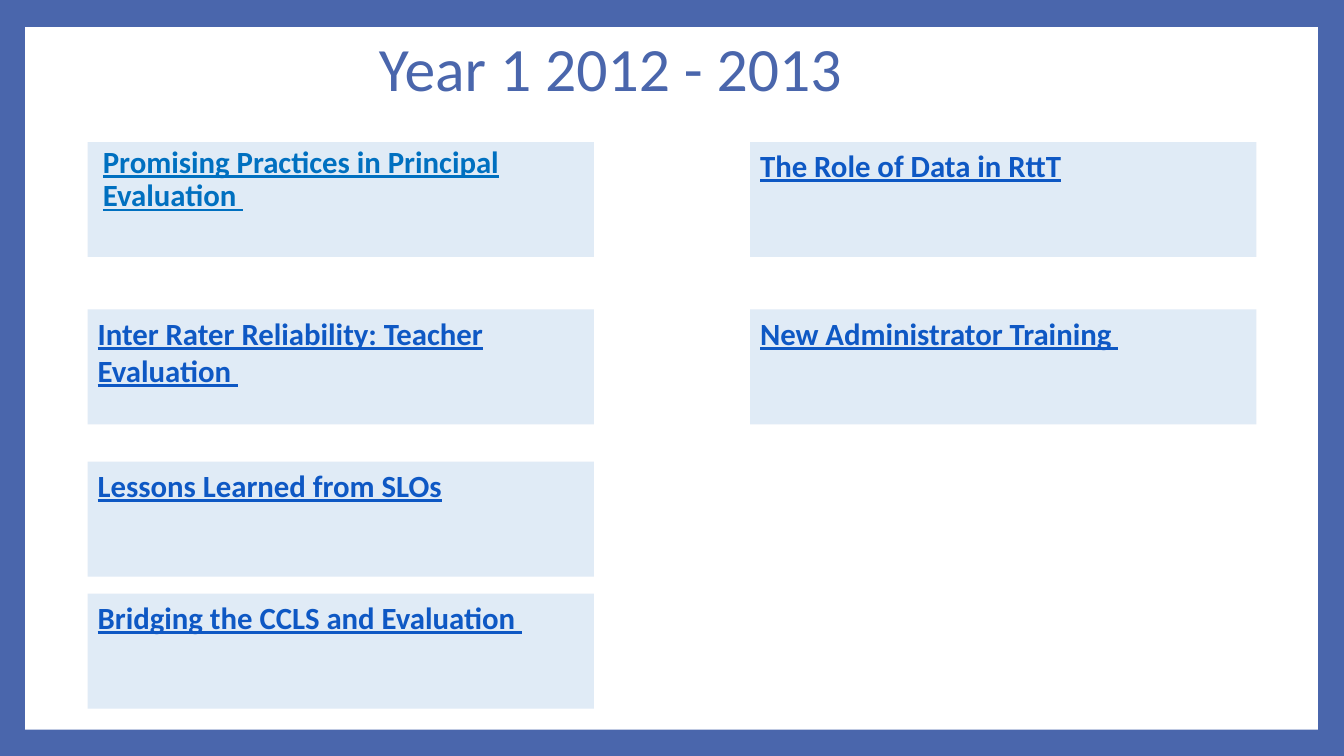
from pptx import Presentation
from pptx.dml.color import RGBColor
from pptx.enum.shapes import MSO_SHAPE
from pptx.enum.text import MSO_ANCHOR, PP_ALIGN
from pptx.util import Inches, Pt

RECT = MSO_SHAPE.RECTANGLE
TOP, MIDDLE = MSO_ANCHOR.TOP, MSO_ANCHOR.MIDDLE
LEFT, CENTER = PP_ALIGN.LEFT, PP_ALIGN.CENTER

FONT = "Calibri"
BLUE, WHITE, PALE = "4A66AC", "FFFFFF", "E0EBF6"
LINK, LEAD_LINK = "0E58C4", "0070C0"

COLUMNS = (0.87, 7.44)
ROWS = (1.41, 3.07, 4.58, 5.89)
CARD_W, CARD_H = 5.02, 1.14

# Topics by column, top to bottom
TOPICS = (
    ("Promising Practices in Principal Evaluation ",
     "Inter Rater Reliability: Teacher Evaluation ",
     "Lessons Learned from SLOs",
     "Bridging the CCLS and Evaluation "),
    ("The Role of Data in RttT",
     "New Administrator Training "),
)


def rgb(color):
    return RGBColor.from_string(color)


def add_rect(s, x, y, w, h, color):
    sp = s.shapes.add_shape(RECT, Inches(x), Inches(y), Inches(w), Inches(h))
    sp.shadow.inherit = False
    sp.fill.solid()
    sp.fill.fore_color.rgb = rgb(color)
    sp.line.fill.background()
    return sp


def write(sp, text, size, color, align=LEFT, anchor=TOP, link=False):
    tf = sp.text_frame
    tf.word_wrap = True
    tf.vertical_anchor = anchor
    p = tf.paragraphs[0]
    p.alignment = align
    r = p.add_run()
    r.text = text
    r.font.name = FONT
    r.font.size = Pt(size)
    r.font.color.rgb = rgb(color)
    r.font.bold = r.font.underline = link
    return p


def add_title(s, text):
    sp = s.shapes.add_textbox(Inches(0.14), Inches(0), Inches(11.97), Inches(1.41))
    p = write(sp, text, 44, BLUE, CENTER, MIDDLE)
    p.line_spacing = 0.9


def add_card(s, x, y, text, lead=False):
    sp = add_rect(s, x, y, CARD_W, CARD_H, PALE)
    p = write(sp, text, 22, LEAD_LINK if lead else LINK, link=True)
    if lead:
        p.line_spacing = 0.9
        p.space_before = Pt(14)
        # The lead topic sits slightly further in
        sp.text_frame.margin_left = Inches(0.15)


def main():
    prs = Presentation()
    prs.slide_width, prs.slide_height = Inches(13.33), Inches(7.5)
    s = prs.slides.add_slide(prs.slide_layouts[6])

    # Blue frame around a white page
    s.background.fill.solid()
    s.background.fill.fore_color.rgb = rgb(BLUE)
    add_rect(s, 0.25, 0.27, 12.82, 6.97, WHITE)

    add_title(s, "Year 1 2012 - 2013 ")

    # Topic cards
    for x, topics in zip(COLUMNS, TOPICS):
        for y, topic in zip(ROWS, topics):
            add_card(s, x, y, topic, lead=topic == TOPICS[0][0])

    prs.save("out.pptx")


if __name__ == "__main__":
    main()
